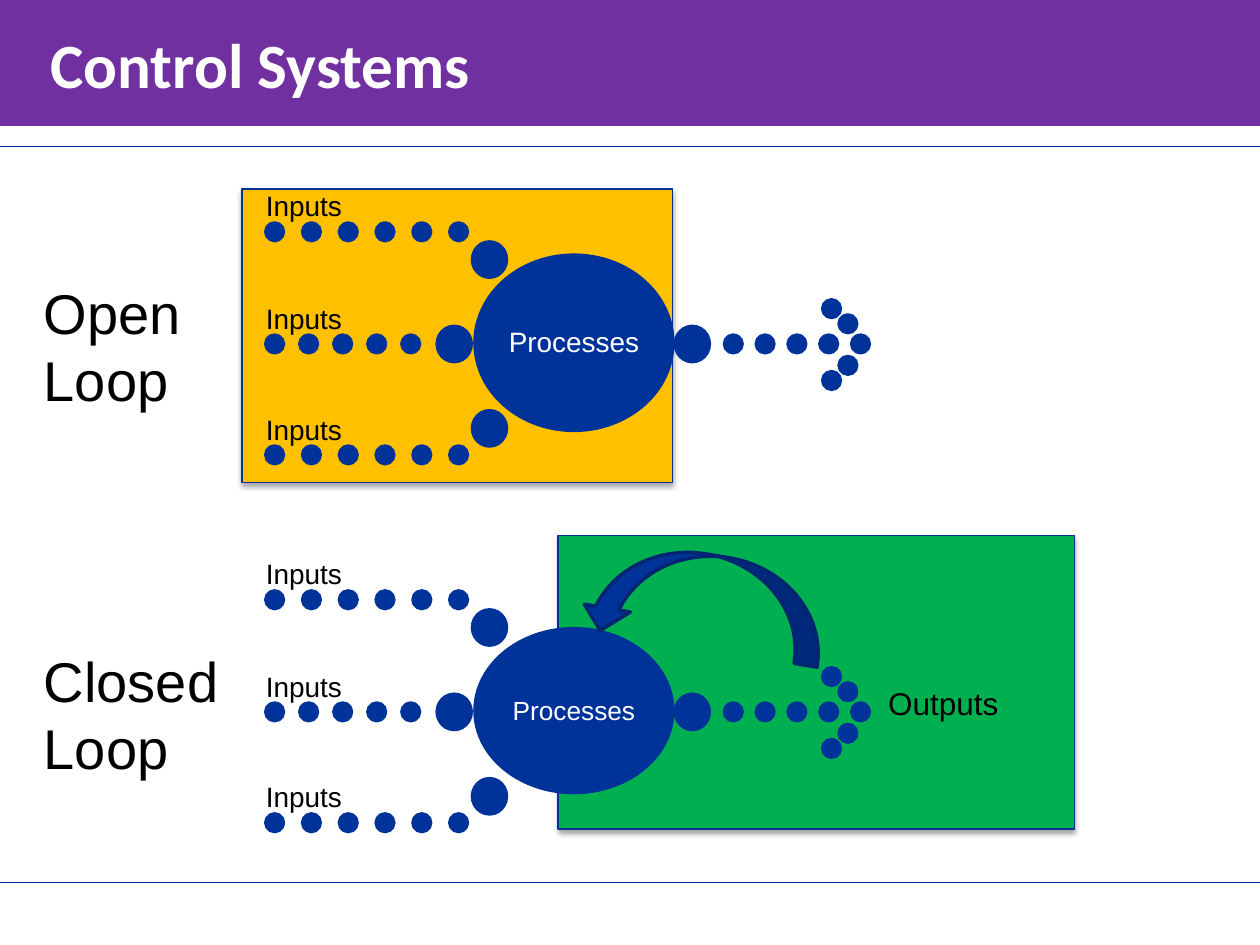
from dataclasses import dataclass

from lxml import etree
from pptx import Presentation
from pptx.dml.color import RGBColor
from pptx.enum.shapes import MSO_CONNECTOR, MSO_SHAPE
from pptx.enum.text import MSO_ANCHOR, MSO_AUTO_SIZE, PP_ALIGN
from pptx.oxml import parse_xml
from pptx.oxml.ns import nsdecls, qn
from pptx.util import Inches, Pt

RECTANGLE, OVAL = MSO_SHAPE.RECTANGLE, MSO_SHAPE.OVAL
CURVED_ARROW = MSO_SHAPE.CURVED_UP_ARROW
STRAIGHT = MSO_CONNECTOR.STRAIGHT
TOP, MIDDLE, BOTTOM = MSO_ANCHOR.TOP, MSO_ANCHOR.MIDDLE, MSO_ANCHOR.BOTTOM
LEFT, CENTER = PP_ALIGN.LEFT, PP_ALIGN.CENTER
TITLE_ONLY = 5


@dataclass(frozen=True)
class Theme:
    blue: str = "003399"
    panel_line: str = "003296"
    arrow_line: str = "002671"
    purple: str = "7030A0"
    green: str = "00B050"
    amber: str = "FFC000"
    white: str = "FFFFFF"
    black: str = "000000"
    title_font: str = "Calibri"
    body_font: str = "Arial"
    title: float = 36
    heading: float = 32
    output: float = 18
    label: float = 16
    small_label: float = 15


THEME = Theme()
DOT = 0.14
BIG_DOT = (0.27, 0.28)
INPUT_LEFT = 2.11
LABEL_HEIGHT = 0.35
PROCESS_LEFT, PROCESS_WIDTH = 3.77, 1.57
# Vertical offset from the middle row, dot count, dot pitch, label width
INPUT_ROWS = [(-0.89, 6, 0.292, 1.61), (0, 5, 0.27, 1.22), (0.88, 6, 0.292, 1.61)]
# Left edge and vertical offset from the middle row
BIG_DOTS = [(3.75, -0.74), (3.47, -0.07), (3.75, 0.6), (5.36, -0.07)]
ARROWHEAD_DOTS = [(6.53, -0.28), (6.66, -0.16), (6.66, 0.17), (6.53, 0.29)]
OUTPUT_DOTS = [(5.75 + 0.2525 * i, 0) for i in range(5)]


def color(value):
    return RGBColor.from_string(value)


def add_shape(shapes, kind, box, fill, line, line_width):
    shape = shapes.add_shape(kind, *map(Inches, box))
    shape.shadow.inherit = False
    shape.fill.solid()
    shape.fill.fore_color.rgb = color(fill)
    shape.line.color.rgb = color(line)
    shape.line.width = Pt(line_width)
    return shape


def write_text(frame, lines, font, margins, anchor, align, spacing=None):
    """Fill a text frame with one paragraph per line."""
    settings = dict(zip(("margin_left", "margin_top", "margin_right", "margin_bottom"),
                        map(Inches, margins)))
    settings.update(word_wrap=True, vertical_anchor=anchor)
    for name, value in settings.items():
        setattr(frame, name, value)
    for index, line in enumerate(lines):
        paragraph = frame.paragraphs[0] if index == 0 else frame.add_paragraph()
        paragraph.alignment = align
        paragraph.line_spacing = spacing
        run = paragraph.add_run()
        run.text = line
        run.font.color.rgb = color(font["color"])
        for name in ("name", "size", "bold"):
            setattr(run.font, name, font[name])


def make_font(size, text_color=THEME.black, name=THEME.body_font, bold=False):
    return {"size": Pt(size), "color": text_color, "name": name, "bold": bold}


def add_text(shapes, box, lines, font, margins=(0.1, 0.05, 0.1, 0.05),
             anchor=TOP, align=LEFT, spacing=None):
    text_box = shapes.add_textbox(*map(Inches, box))
    write_text(text_box.text_frame, lines, font, margins, anchor, align, spacing)


def add_rule(shapes, y):
    rule = shapes.add_connector(STRAIGHT, 0, Inches(y), Inches(10), Inches(y))
    rule.line.color.rgb = color(THEME.blue)
    rule.line.width = Pt(0.5)
    etree.SubElement(rule._element.spPr, qn("a:effectLst"))


def add_panel(shapes, box, fill):
    """Add a rectangle with a soft shadow below it."""
    panel = add_shape(shapes, RECTANGLE, box, fill, THEME.panel_line, 0.75)
    panel._element.spPr.find(qn("a:effectLst")).append(parse_xml(
        f'<a:outerShdw {nsdecls("a")} blurRad="{Pt(3.1)}" dist="{Pt(1.8)}" '
        'dir="5400000" rotWithShape="0"><a:srgbClr val="000000">'
        '<a:alpha val="35000"/></a:srgbClr></a:outerShdw>'))


def add_oval(shapes, left, top, width=DOT, height=DOT):
    add_shape(shapes, OVAL, (left, top, width, height), THEME.blue, THEME.blue, 2)


def add_process(slide, row_top, height, label_size):
    """Add a group of dotted inputs, a process and a dotted output arrow."""
    shapes = slide.shapes.add_group_shape().shapes
    for left, offset in OUTPUT_DOTS + ARROWHEAD_DOTS:
        add_oval(shapes, left, row_top + offset)

    center = row_top + DOT / 2
    add_oval(shapes, PROCESS_LEFT, center - height / 2 - 0.01, PROCESS_WIDTH, height)
    text_height = height * 0.7
    add_text(shapes, (4, center - text_height / 2, 1.11, text_height), ["Processes"],
             make_font(label_size, THEME.white), (0.02,) * 4, MIDDLE, CENTER, 0.9)

    for left, offset in BIG_DOTS:
        add_oval(shapes, left, row_top + offset, *BIG_DOT)
    for offset, count, pitch, label_width in INPUT_ROWS:
        top = row_top + offset
        for index in range(count):
            add_oval(shapes, INPUT_LEFT + index * pitch, top)
        add_text(shapes, (INPUT_LEFT, top - LABEL_HEIGHT, label_width, LABEL_HEIGHT),
                 ["Inputs"], make_font(THEME.label), (0,) * 4, BOTTOM, LEFT, 0.9)


def add_feedback_arrow(shapes):
    arrow = add_shape(shapes, CURVED_ARROW, (4.63, 4.4, 1.93, 0.74),
                      THEME.blue, THEME.arrow_line, 2)
    arrow.rotation = 9.6
    transform = arrow._element.spPr.find(qn("a:xfrm"))
    for flip in ("flipH", "flipV"):
        transform.set(flip, "1")


def format_title(title):
    title.left, title.top, title.width, title.height = map(Inches, (0, 0, 10, 1))
    title.fill.solid()
    title.fill.fore_color.rgb = color(THEME.purple)
    title.text_frame.auto_size = MSO_AUTO_SIZE.NONE
    write_text(title.text_frame, ["Control Systems"],
               make_font(THEME.title, THEME.white, THEME.title_font, True),
               (0.4, 0.05, 0.1, 0.05), MIDDLE, LEFT)


def main():
    presentation = Presentation()
    presentation.slide_width, presentation.slide_height = Inches(10), Inches(7.5)
    slide = presentation.slides.add_slide(presentation.slide_layouts[TITLE_ONLY])
    shapes = slide.shapes
    format_title(shapes.title)
    for y in (1.16, 7):
        add_rule(shapes, y)
    add_panel(shapes, (4.43, 4.25, 4.1, 2.33), THEME.green)
    add_panel(shapes, (1.92, 1.5, 3.42, 2.33), THEME.amber)
    add_process(slide, 2.66, 1.39, THEME.label)
    add_process(slide, 5.58, 1.3, THEME.small_label)
    add_feedback_arrow(shapes)
    add_text(shapes, (6.95, 5.38, 1.59, 0.4), ["Outputs"], make_font(THEME.output))
    for name, top, width in (("Open", 2.16, 1.5), ("Closed", 5.08, 1.67)):
        add_text(shapes, (0.25, top, width, 1.18), [name, "Loop"],
                 make_font(THEME.heading))
    presentation.save("out.pptx")


if __name__ == "__main__":
    main()
